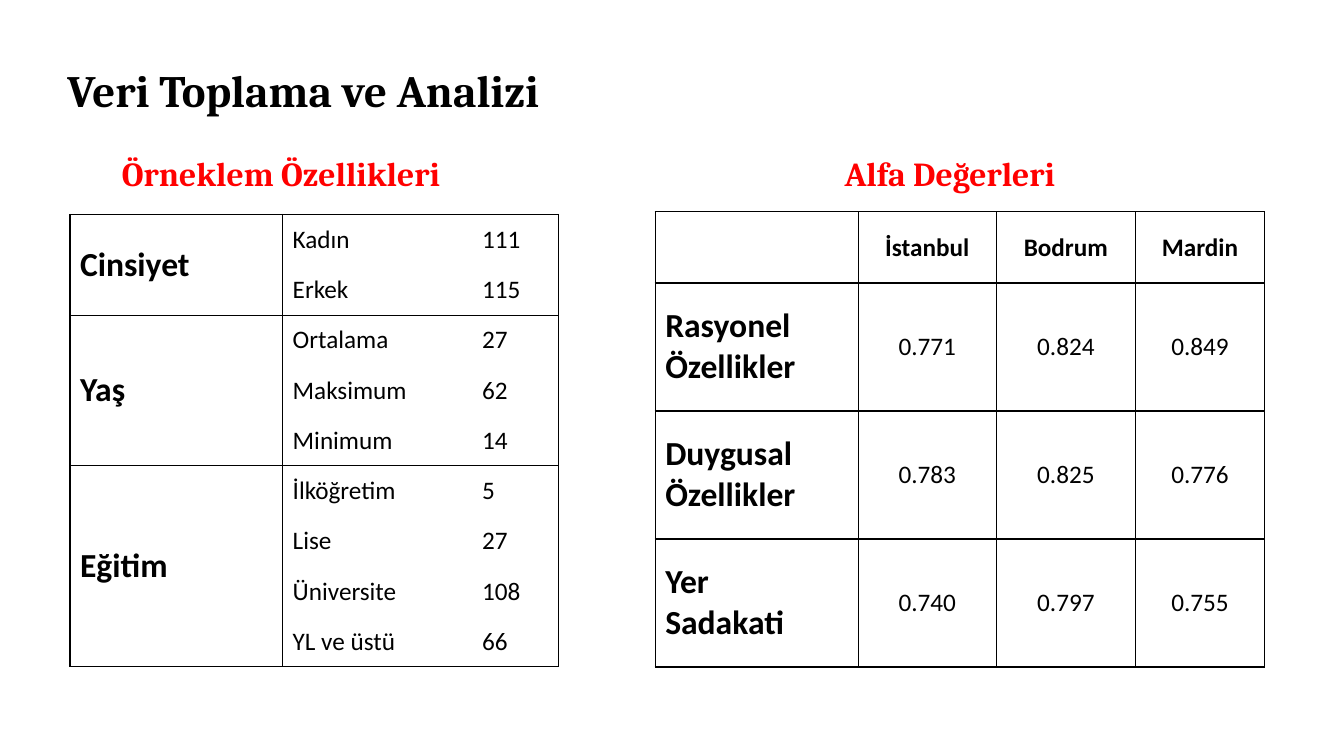
import pptx
import pptx.util
import pptx.dml.color
import pptx.enum.text
import pptx.oxml
import lxml.etree

Pt = pptx.util.Pt
ALIGN = pptx.enum.text.PP_ALIGN
MIDDLE = pptx.enum.text.MSO_ANCHOR.MIDDLE
COLORS = {"ink": "000000", "accent": "FF0000"}


def write(tf, text, size=18, font="Calibri", color="ink", bold=False,
          align=ALIGN.LEFT, before=0):
    for i, line in enumerate(text.split("\n")):
        p = tf.paragraphs[0] if i == 0 else tf.add_paragraph()
        p.alignment = align
        p.space_before = Pt(before)
        r = p.add_run()
        r.text = line
        r.font.name = font
        r.font.size = Pt(size)
        r.font.bold = bold
        r.font.color.rgb = pptx.dml.color.RGBColor.from_string(COLORS[color])


def style_cell(cell, sides):
    cell.vertical_anchor = MIDDLE
    cell.fill.background()
    tc_pr = cell._tc.get_or_add_tcPr()
    for i, side in enumerate("LRTB"):
        ln = pptx.oxml.parse_xml(
            '<a:ln%s xmlns:a="http://schemas.openxmlformats.org/drawingml/2006/main" w="12700"/>' % side)
        fill = lxml.etree.SubElement(ln, pptx.oxml.ns.qn("a:solidFill" if side in sides else "a:noFill"))
        if side in sides:
            lxml.etree.SubElement(fill, pptx.oxml.ns.qn("a:srgbClr"), val=COLORS["ink"])
        tc_pr.insert(i, ln)


prs = pptx.Presentation()
prs.slide_width = Pt(960)
prs.slide_height = Pt(540)
s = prs.slides.add_slide(prs.slide_layouts[5])

title = s.shapes.title
title.left, title.top, title.width, title.height = Pt(41), Pt(21.6), Pt(648), Pt(84.2)
title.text_frame.vertical_anchor = MIDDLE
write(title.text_frame, "Veri Toplama ve Analizi", size=32, font="Cambria", bold=True)

for heading, left, width in [("Örneklem Özellikleri", 71.3, 357.8),
                             ("Alfa Değerleri", 587.5, 234.7)]:
    tf = s.shapes.add_textbox(Pt(left), Pt(105.8), Pt(width), Pt(73.4)).text_frame
    tf.word_wrap = True
    tf.margin_left = Pt(15.8)
    write(tf, heading, size=24, font="Cambria", color="accent", bold=True, before=3)

groups = {
    "Cinsiyet": [("Kadın", 111), ("Erkek", 115)],
    "Yaş": [("Ortalama", 27), ("Maksimum", 62), ("Minimum", 14)],
    "Eğitim": [("İlköğretim", 5), ("Lise", 27), ("Üniversite", 108), ("YL ve üstü", 66)],
}
alphas = [
    ("", "İstanbul", "Bodrum", "Mardin"),
    ("Rasyonel\nÖzellikler", "0.771", "0.824", "0.849"),
    ("Duygusal\nÖzellikler", "0.783", "0.825", "0.776"),
    ("Yer\nSadakati", "0.740", "0.797", "0.755"),
]

sample_table = s.shapes.add_table(9, 3, Pt(50), Pt(153.2), Pt(349.2), Pt(323.1)).table
alpha_table = s.shapes.add_table(4, 4, Pt(468), Pt(151.2), Pt(435.4), Pt(325)).table
for table, widths, heights in [
    (sample_table, [151.9, 135.4, 61.9], [35.9] * 9),
    (alpha_table, [145, 98.8, 99.2, 92.4], [51] + [91.4] * 3),
]:
    table.first_row = table.horz_banding = False
    for column, width in zip(table.columns, widths):
        column.width = Pt(width)
    for row, height in zip(table.rows, heights):
        row.height = Pt(height)

top = 0
for group, entries in groups.items():
    bottom = top + len(entries) - 1
    for row, (label, count) in enumerate(entries, top):
        edges = ("T" if row == top else "") + ("B" if row == bottom else "")
        for col, sides in enumerate(["LR", "L", "R"]):
            style_cell(sample_table.cell(row, col), sides + ("TB" if col == 0 else edges))
        write(sample_table.cell(row, 1).text_frame, label)
        write(sample_table.cell(row, 2).text_frame, str(count))
    sample_table.cell(top, 0).merge(sample_table.cell(bottom, 0))
    write(sample_table.cell(top, 0).text_frame, group, size=24, bold=True)
    top = bottom + 1

for row, values in enumerate(alphas):
    for col, value in enumerate(values):
        cell = alpha_table.cell(row, col)
        style_cell(cell, "LRTB")
        if value:
            write(cell.text_frame, value, size=18 if col else 24,
                  bold=row == 0 or col == 0, align=ALIGN.CENTER if col else ALIGN.LEFT)

prs.save("out.pptx")
